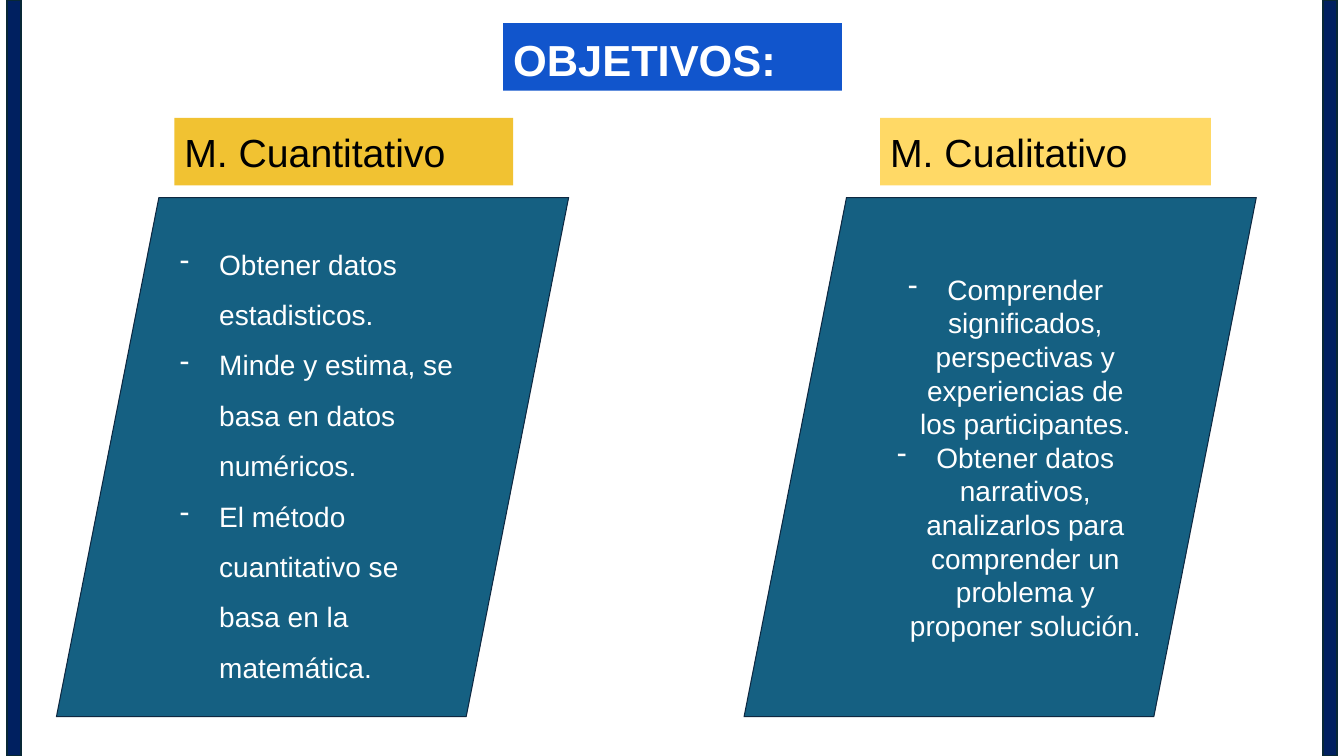
from lxml import etree
from pptx import Presentation
from pptx.dml.color import RGBColor
from pptx.enum.shapes import MSO_SHAPE
from pptx.enum.text import MSO_ANCHOR, MSO_AUTO_SIZE, PP_ALIGN
from pptx.oxml.ns import qn
from pptx.util import Inches, Pt

RECTANGLE = MSO_SHAPE.RECTANGLE
PARALLELOGRAM = MSO_SHAPE.FLOWCHART_DATA
TOP, MIDDLE = MSO_ANCHOR.TOP, MSO_ANCHOR.MIDDLE
LEFT, CENTER = PP_ALIGN.LEFT, PP_ALIGN.CENTER
NO_AUTOFIT = MSO_AUTO_SIZE.NONE

WIDTH, HEIGHT = 13.33, 7.5
BAR_WIDTH = 0.14
LABEL_HEIGHT = 0.67
LABEL_TOP, PANEL_TOP = 1.17, 1.96
PANEL_WIDTH, PANEL_HEIGHT = 5.08, 5.15


def paint(shape, fill, line=None, line_width=0):
    shape.fill.solid()
    shape.fill.fore_color.rgb = RGBColor.from_string(fill)
    if line:
        shape.line.color.rgb = RGBColor.from_string(line)
        shape.line.width = Pt(line_width)
    else:
        shape.line.fill.background()


def write(shape, lines, size, color, bold=False, anchor=TOP, align=LEFT, spacing=1.0, bullet=None):
    frame = shape.text_frame
    frame.word_wrap = True
    frame.auto_size = NO_AUTOFIT
    frame.vertical_anchor = anchor
    frame.margin_left = frame.margin_right = Inches(0.1)
    frame.margin_top = frame.margin_bottom = Inches(0.1)
    frame.text = "\n".join(lines)
    for paragraph in frame.paragraphs:
        paragraph.alignment = align
        paragraph.line_spacing = spacing
        if bullet:
            properties = paragraph._p.get_or_add_pPr()
            properties.set("marL", str(Inches(0.5)))
            properties.set("indent", str(Inches(-0.39)))
            bullet_color = etree.SubElement(properties, qn("a:buClr"))
            etree.SubElement(bullet_color, qn("a:srgbClr"), val=color)
            etree.SubElement(properties, qn("a:buChar"), char=bullet)
        paragraph.font.name = "Arial"
        paragraph.font.size = Pt(size)
        paragraph.font.bold = bold
        paragraph.font.color.rgb = RGBColor.from_string(color)


presentation = Presentation()
presentation.slide_width, presentation.slide_height = Inches(WIDTH), Inches(HEIGHT)
slide = presentation.slides.add_slide(presentation.slide_layouts[5])
shapes = slide.shapes

# Side bars, mirrored about the slide's centre
for left in (0.07, WIDTH - 0.07 - BAR_WIDTH):
    bar = shapes.add_shape(RECTANGLE, Inches(left), 0, Inches(BAR_WIDTH), Inches(HEIGHT))
    bar.shadow.inherit = False
    paint(bar, "002060", "082836", 1.5)

# Title
title = shapes.title
title.left, title.top = Inches(4.99), Inches(0.23)
title.width, title.height = Inches(3.36), Inches(LABEL_HEIGHT)
paint(title, "1155CC")
write(title, ["OBJETIVOS:"], 31, "FFFFFF", bold=True)

# One column per method: label above a parallelogram with its objectives
methods = [
    ("M. Cuantitativo", 1.73, 3.36, "F1C232", 0.56, LEFT, 1.5, [
        "Obtener datos estadisticos.",
        "Minde y estima, se basa en datos numéricos.",
        "El método cuantitativo se basa en la matemática.",
    ]),
    ("M. Cualitativo", 8.73, 3.28, "FFD966", 7.38, CENTER, 1.0, [
        "Comprender significados, perspectivas y experiencias de los participantes.",
        "Obtener datos narrativos, analizarlos para comprender un problema y proponer solución.",
    ]),
]
for name, label_left, label_width, label_fill, panel_left, align, spacing, objectives in methods:
    panel = shapes.add_shape(PARALLELOGRAM, Inches(panel_left), Inches(PANEL_TOP),
                             Inches(PANEL_WIDTH), Inches(PANEL_HEIGHT))
    panel.shadow.inherit = False
    paint(panel, "156082", "0E2841", 0.75)
    write(panel, objectives, 20, "FFFFFF", anchor=MIDDLE, align=align, spacing=spacing, bullet="-")

    label = shapes.add_shape(RECTANGLE, Inches(label_left), Inches(LABEL_TOP),
                             Inches(label_width), Inches(LABEL_HEIGHT))
    label.shadow.inherit = False
    paint(label, label_fill)
    write(label, [name], 28, "000000")

presentation.save("out.pptx")
